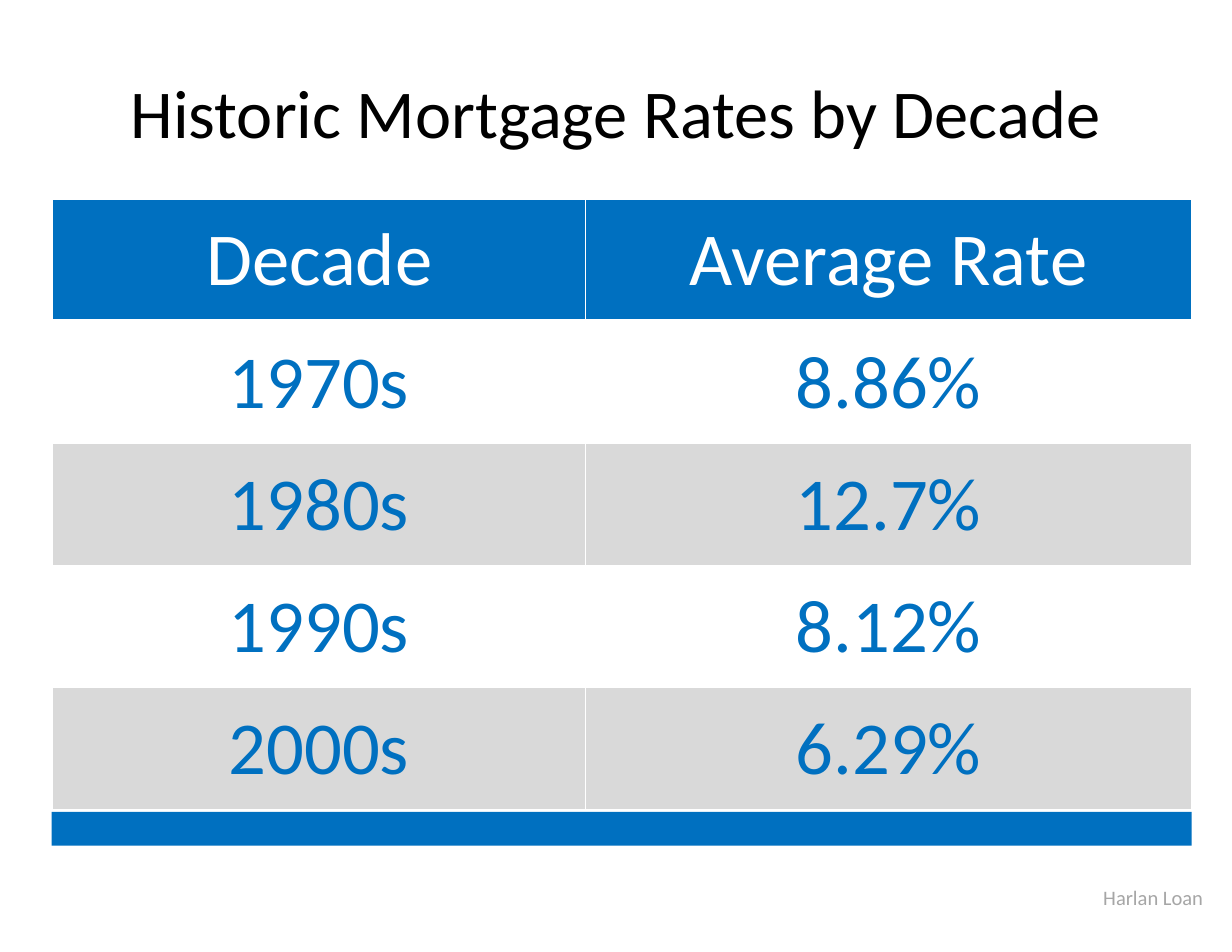
"""Build the slide of historic mortgage rates by decade."""
from dataclasses import dataclass

from lxml.etree import SubElement
from pptx import Presentation
from pptx.dml.color import RGBColor
from pptx.enum.shapes import MSO_SHAPE
from pptx.enum.text import MSO_ANCHOR, MSO_AUTO_SIZE, PP_ALIGN
from pptx.oxml.ns import qn
from pptx.util import Inches, Pt

TITLE = "Historic Mortgage Rates by Decade"
SOURCE = "Harlan Loan"
RATES = [
    ("Decade", "Average Rate"),
    ("1970s", "8.86%"),
    ("1980s", "12.7%"),
    ("1990s", "8.12%"),
    ("2000s", "6.29%"),
]


@dataclass(frozen=True)
class Theme:
    font: str = "Calibri"
    blue: str = "0070C0"
    band: str = "D9D9D9"
    white: str = "FFFFFF"
    black: str = "000000"
    muted: str = "A6A6A6"
    title_size: float = 44
    table_size: float = 48
    source_size: float = 13.2
    border: float = 1
    header_border: float = 3


THEME = Theme()
WIDTH, HEIGHT = Inches(11), Inches(8.5)
TABLE_LEFT, TABLE_TOP = Inches(0.47), Inches(1.78)
TABLE_WIDTH, ROW_HEIGHT = Inches(10.17), Inches(1.09)
COLUMN_SHARES = (0.468, 0.532)


def write(frame, text, size, color, alignment):
    paragraph = frame.paragraphs[0]
    paragraph.alignment = alignment
    run = paragraph.add_run()
    run.text = text
    run.font.name = THEME.font
    run.font.size = Pt(size)
    run.font.color.rgb = RGBColor.from_string(color)


def add_label(slide, box, text, size, color, alignment, wrap):
    frame = slide.shapes.add_textbox(*box).text_frame
    frame.word_wrap = wrap
    frame.auto_size = MSO_AUTO_SIZE.SHAPE_TO_FIT_TEXT
    write(frame, text, size, color, alignment)


def add_borders(cell, widths):
    properties = cell._tc.get_or_add_tcPr()
    for side, width in widths.items():
        line = SubElement(properties, qn(f"a:ln{side}"), w=str(Pt(width)))
        fill = SubElement(line, qn("a:solidFill"))
        SubElement(fill, qn("a:srgbClr"), val=THEME.white)


def fill_cell(cell, text, row):
    header = row == 0
    widths = dict.fromkeys("LRTB", THEME.border)
    if header:
        widths["B"] = THEME.header_border
    elif row == 1:
        widths["T"] = THEME.header_border
    add_borders(cell, widths)
    if header or row % 2 == 0:
        cell.fill.solid()
        cell.fill.fore_color.rgb = RGBColor.from_string(THEME.blue if header else THEME.band)
    else:
        cell.fill.background()
    cell.vertical_anchor = MSO_ANCHOR.MIDDLE
    color = THEME.white if header else THEME.blue
    write(cell.text_frame, text, THEME.table_size, color, PP_ALIGN.CENTER)


def add_rates(slide):
    table = slide.shapes.add_table(
        len(RATES), len(COLUMN_SHARES), TABLE_LEFT, TABLE_TOP,
        TABLE_WIDTH, ROW_HEIGHT * len(RATES),
    ).table
    table.horz_banding = False
    for column, share in zip(table.columns, COLUMN_SHARES):
        column.width = int(TABLE_WIDTH * share)
    for row, values in enumerate(RATES):
        table.rows[row].height = ROW_HEIGHT
        for column, text in enumerate(values):
            fill_cell(table.cell(row, column), text, row)


def add_bar(slide):
    top = TABLE_TOP + ROW_HEIGHT * len(RATES) + Inches(0.02)
    bar = slide.shapes.add_shape(
        MSO_SHAPE.RECTANGLE, TABLE_LEFT - Inches(0.01), top,
        TABLE_WIDTH + Inches(0.01), Inches(0.3),
    )
    bar.shadow.inherit = False
    bar.fill.solid()
    bar.fill.fore_color.rgb = RGBColor.from_string(THEME.blue)
    bar.line.fill.background()


def main():
    presentation = Presentation()
    presentation.slide_width, presentation.slide_height = WIDTH, HEIGHT
    slide = presentation.slides.add_slide(presentation.slide_layouts[6])
    add_rates(slide)
    source_box = (Inches(9.7), Inches(7.85), Inches(1.14), Inches(0.32))
    add_label(slide, source_box, SOURCE, THEME.source_size, THEME.muted, PP_ALIGN.RIGHT, False)
    title_box = (0, Inches(0.58), WIDTH, Inches(0.84))
    add_label(slide, title_box, TITLE, THEME.title_size, THEME.black, PP_ALIGN.CENTER, True)
    add_bar(slide)
    presentation.save("out.pptx")


if __name__ == "__main__":
    main()
